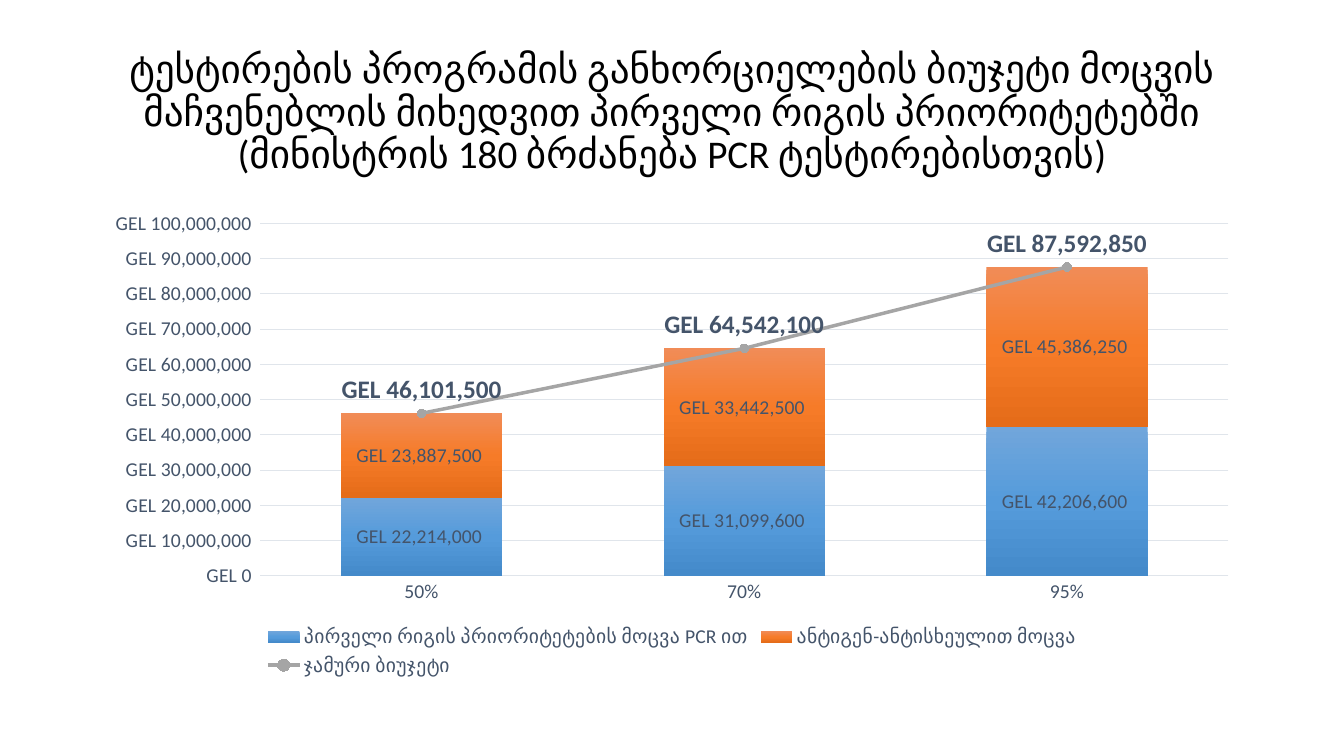
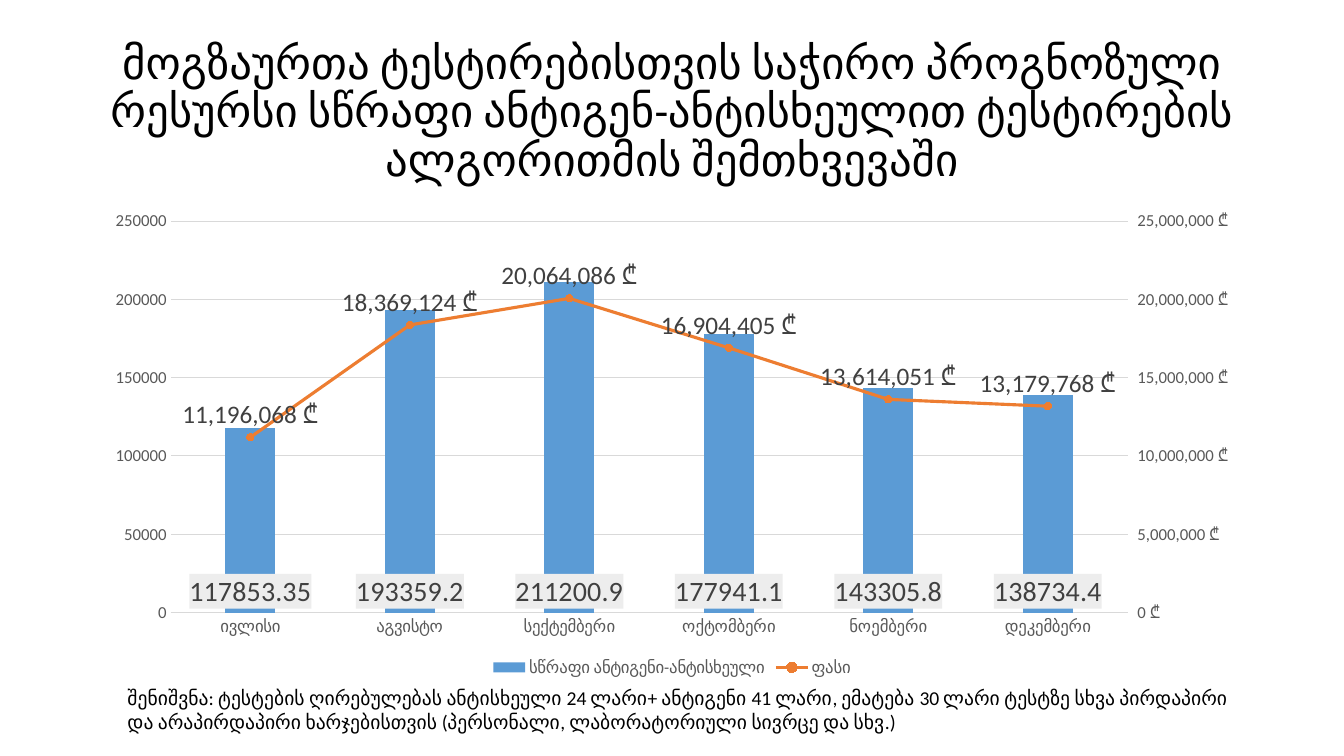
from copy import deepcopy

from pptx import Presentation
from pptx.chart.axis import ValueAxis
from pptx.chart.data import CategoryChartData
from pptx.dml.color import RGBColor
from pptx.enum.chart import XL_CHART_TYPE as ChartType
from pptx.enum.chart import XL_LABEL_POSITION as LabelPosition
from pptx.enum.chart import XL_LEGEND_POSITION as LegendPosition
from pptx.enum.chart import XL_MARKER_STYLE as MarkerStyle
from pptx.enum.chart import XL_TICK_MARK as TickMark
from pptx.enum.text import MSO_ANCHOR as Anchor
from pptx.enum.text import PP_ALIGN as Align
from pptx.oxml import parse_xml
from pptx.oxml.ns import nsdecls, qn
from pptx.util import Inches, Pt

CELL = Inches(1) // 6
COLUMNS, ROWS = 80, 45
FONT = "Calibri"
BLACK, SLATE, GRAY, DARK = "000000", "44546A", "595959", "404040"
TITLE_AREA = (5.5, 2.4, 69, 8.7)
CHART_AREA = (5.5, 12, 69, 28.56)
NOTE_AREA = (7, 40.56, 68.4, 3.42)
GEL_FORMAT = r"[$GEL]\ #,##0_);\([$GEL]\ #,##0\)"
LARI_FORMAT = r"#,##0\ [$₾-437]"


def color(value):
    return RGBColor.from_string(value)


def place(area):
    return [round(cells * CELL) for cells in area]


def set_font(font, size, fill, bold=False):
    font.name, font.size, font.bold = FONT, Pt(size), bold
    font.color.rgb = color(fill)


def set_line(line, fill, width):
    line.color.rgb = color(fill)
    line.width = Pt(width)


def add_text(slide, area, text, size, align=Align.LEFT, anchor=Anchor.TOP, spacing=1.0):
    frame = slide.shapes.add_textbox(*place(area)).text_frame
    frame.word_wrap = True
    frame.vertical_anchor = anchor
    paragraph = frame.paragraphs[0]
    paragraph.alignment, paragraph.line_spacing = align, spacing
    run = paragraph.add_run()
    run.text = text
    set_font(run.font, size, BLACK)


def add_title(slide, text, size):
    add_text(slide, TITLE_AREA, text, size, Align.CENTER, Anchor.MIDDLE, 0.9)


def add_chart(slide, chart_type, categories, series, size, fill):
    data = CategoryChartData()
    data.categories = categories
    for name, values in series:
        data.add_series(name, values)
    chart = slide.shapes.add_chart(chart_type, *place(CHART_AREA), data).chart
    chart.has_title = False
    chart.has_legend = True
    chart.legend.position = LegendPosition.BOTTOM
    chart.legend.include_in_layout = False
    set_font(chart.font, size, fill)
    set_font(chart.legend.font, size, fill)
    return chart


def style_axis(axis, size, fill, tick=TickMark.NONE):
    axis.major_tick_mark, axis.minor_tick_mark = tick, TickMark.NONE
    set_font(axis.tick_labels.font, size, fill)


def style_value_axis(axis, size, fill, step, maximum, number_format, tick=TickMark.NONE):
    style_axis(axis, size, fill, tick)
    axis.minimum_scale, axis.maximum_scale, axis.major_unit = 0, maximum, step
    axis.tick_labels.number_format = number_format
    axis.tick_labels.number_format_is_linked = False
    axis.format.line.fill.background()


def style_axes(chart, size, fill, grid, step, maximum, number_format):
    style_axis(chart.category_axis, size, fill)
    set_line(chart.category_axis.format.line, grid, 0.75)
    style_value_axis(chart.value_axis, size, fill, step, maximum, number_format)
    chart.value_axis.has_major_gridlines = True
    set_line(chart.value_axis.major_gridlines.format.line, grid, 0.75)


def style_columns(plot, gap, overlap):
    plot.gap_width, plot.overlap = gap, overlap
    plot.vary_by_categories = False


def add_labels(series, size, fill, number_format="General", position=None, bold=False):
    labels = series.data_labels
    labels.show_value = True
    labels.number_format = number_format
    labels.number_format_is_linked = False
    set_font(labels.font, size, fill, bold)
    if position is not None:
        labels.position = position
    return labels


def fill_labels(labels, fill):
    box = parse_xml(
        f'<c:spPr {nsdecls("c", "a")}><a:solidFill><a:srgbClr val="{fill}"/></a:solidFill></c:spPr>'
    )
    labels._element.find(qn("c:txPr")).addprevious(box)


def fill_gradient(series, colors):
    fill = series.format.fill
    fill.gradient()
    fill.gradient_angle = 270
    stops = series._element.find(".//" + qn("a:gsLst"))
    stops.append(deepcopy(stops[-1]))
    for index, (stop, value) in enumerate(zip(fill.gradient_stops, colors)):
        stop.position = index / (len(colors) - 1)
        stop.color.rgb = color(value)


def last_series_to_line(chart, axis_ids=None):
    columns = chart.plots[0]._element
    axis_ids = axis_ids or [axis.get("val") for axis in columns.findall(qn("c:axId"))]
    axes = "".join(f'<c:axId val="{axis_id}"/>' for axis_id in axis_ids)
    line_plot = parse_xml(
        f'<c:lineChart {nsdecls("c")}><c:grouping val="standard"/><c:varyColors val="0"/>'
        f'<c:marker val="1"/>{axes}</c:lineChart>'
    )
    moved = columns.findall(qn("c:ser"))[-1]
    invert = moved.find(qn("c:invertIfNegative"))
    if invert is not None:
        moved.remove(invert)
    line_plot.insert(2, moved)
    columns.addnext(line_plot)
    return chart.plots[1].series[0]


def add_right_axis(chart, category_id, value_id):
    def axis_xml(tag, axis_id, cross_id, hidden, side, crosses):
        return parse_xml(
            f'<c:{tag} {nsdecls("c")}><c:axId val="{axis_id}"/>'
            f'<c:scaling><c:orientation val="minMax"/></c:scaling><c:delete val="{hidden}"/>'
            f'<c:axPos val="{side}"/><c:majorTickMark val="out"/><c:minorTickMark val="none"/>'
            f'<c:tickLblPos val="nextTo"/><c:crossAx val="{cross_id}"/>'
            f'<c:crosses val="{crosses}"/></c:{tag}>'
        )

    value_axis = axis_xml("valAx", value_id, category_id, 0, "r", "max")
    category_axis = axis_xml("catAx", category_id, value_id, 1, "b", "autoZero")
    chart.value_axis._element.addnext(value_axis)
    value_axis.addnext(category_axis)
    return ValueAxis(value_axis)


def style_line(series, fill, width, marker_size):
    series.smooth = False
    set_line(series.format.line, fill, width)
    marker = series.marker
    marker.style, marker.size = MarkerStyle.CIRCLE, marker_size
    marker.format.fill.solid()
    marker.format.fill.fore_color.rgb = color(fill)
    set_line(marker.format.line, fill, 0.75)


def build_budget(slide):
    add_title(slide, "ტესტირების პროგრამის განხორციელების ბიუჯეტი მოცვის მაჩვენებლის მიხედვით "
              "პირველი რიგის პრიორიტეტებში (მინისტრის 180 ბრძანება PCR ტესტირებისთვის)", 28)
    chart = add_chart(slide, ChartType.COLUMN_STACKED, ["50%", "70%", "95%"], [
        ("პირველი რიგის პრიორიტეტების მოცვა PCR ით", (22214000, 31099600, 42206600)),
        ("ანტიგენ-ანტისხეულით მოცვა", (23887500, 33442500, 45386250)),
        ("ჯამური ბიუჯეტი", (46101500, 64542100, 87592850)),
    ], 14, SLATE)
    style_axes(chart, 14, SLATE, "E0E5EB", 10_000_000, 100_000_000, GEL_FORMAT)
    total = last_series_to_line(chart)
    style_line(total, "A5A5A5", 2.5, 6)
    add_labels(total, 18, SLATE, GEL_FORMAT, LabelPosition.ABOVE, bold=True)
    columns = chart.plots[0]
    style_columns(columns, 100, 100)
    gradients = [("71A6DB", "559BDB", "448ACA"), ("F18C57", "F67B28", "E56C19")]
    for series, colors in zip(columns.series, gradients):
        fill_gradient(series, colors)
        add_labels(series, 14, SLATE, GEL_FORMAT)


def build_travellers(slide):
    add_title(slide, "მოგზაურთა ტესტირებისთვის საჭირო პროგნოზული რესურსი სწრაფი "
              "ანტიგენ-ანტისხეულით ტესტირების ალგორითმის შემთხვევაში", 32)
    months = ["ივლისი", "აგვისტო", "სექტემბერი", "ოქტომბერი", "ნოემბერი", "დეკემბერი"]
    chart = add_chart(slide, ChartType.COLUMN_CLUSTERED, months, [
        ("სწრაფი ანტიგენი-ანტისხეული",
         (117853.35, 193359.2, 211200.9, 177941.1, 143305.8, 138734.4)),
        ("ფასი", (11196068, 18369124, 20064086, 16904405, 13614051, 13179768)),
    ], 12, GRAY)
    style_axes(chart, 12, GRAY, "D9D9D9", 50_000, 250_000, "General")
    right_ids = (50010, 50020)
    price = last_series_to_line(chart, right_ids)
    right_axis = add_right_axis(chart, *right_ids)
    style_value_axis(right_axis, 12, GRAY, 5_000_000, 25_000_000, LARI_FORMAT, TickMark.OUTSIDE)
    style_line(price, "ED7D31", 2.25, 5)
    add_labels(price, 18, DARK, LARI_FORMAT, LabelPosition.ABOVE)
    columns = chart.plots[0]
    style_columns(columns, 219, -27)
    tests = columns.series[0]
    tests.format.fill.solid()
    tests.format.fill.fore_color.rgb = color("5B9BD5")
    fill_labels(add_labels(tests, 20, DARK, position=LabelPosition.INSIDE_BASE), "EDEDED")
    add_text(slide, NOTE_AREA, "შენიშვნა: ტესტების ღირებულებას ანტისხეული 24 ლარი+ ანტიგენი 41 ლარი, "
             "ემატება 30 ლარი ტესტზე სხვა პირდაპირი და არაპირდაპირი ხარჯებისთვის "
             "(პერსონალი, ლაბორატორიული სივრცე და სხვ.)", 14)


def main():
    presentation = Presentation()
    presentation.slide_width = CELL * COLUMNS
    presentation.slide_height = CELL * ROWS
    blank = presentation.slide_layouts[6]
    for build in (build_budget, build_travellers):
        build(presentation.slides.add_slide(blank))
    presentation.save("out.pptx")


if __name__ == "__main__":
    main()
